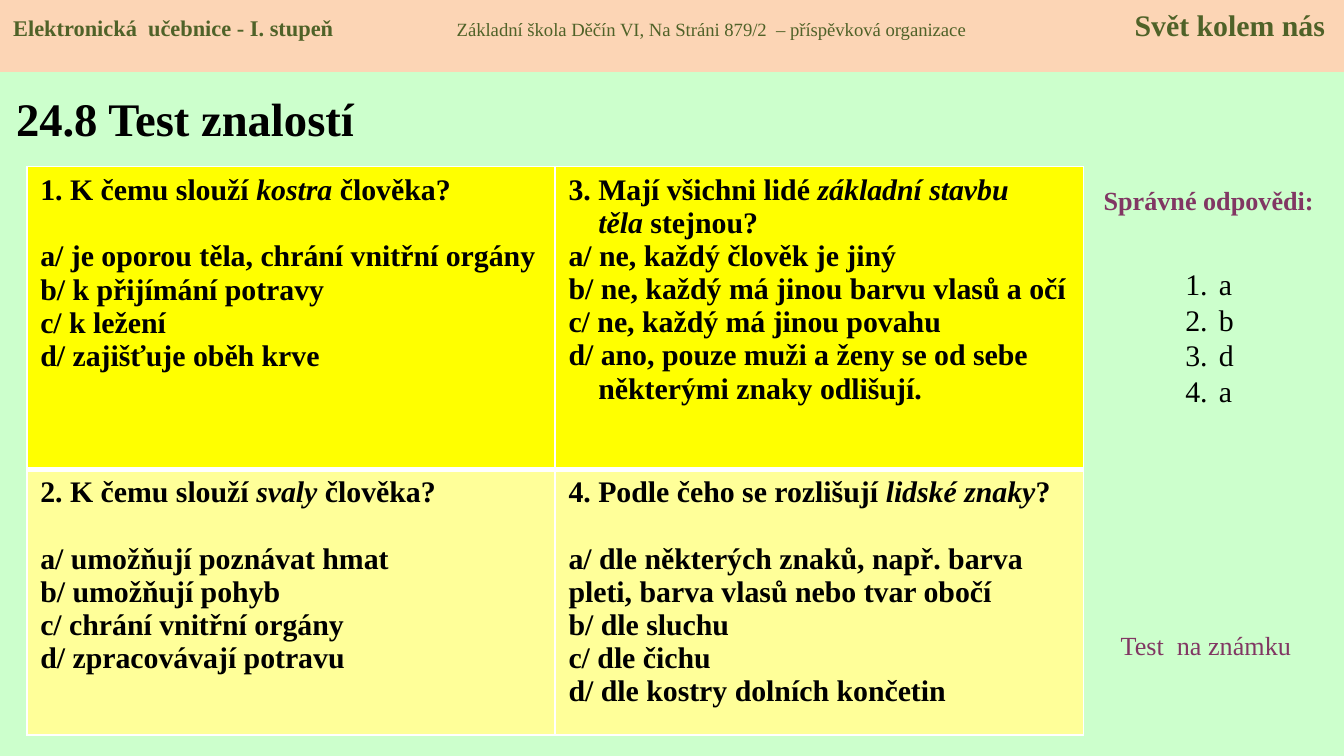
from dataclasses import dataclass

from lxml.etree import SubElement
from pptx import Presentation
from pptx.dml.color import RGBColor
from pptx.enum.shapes import MSO_SHAPE
from pptx.enum.text import MSO_ANCHOR, MSO_AUTO_SIZE, PP_ALIGN
from pptx.oxml.ns import qn
from pptx.util import Pt

COLORS = {
    "page": "CCFFCC", "band": "FCD5B5", "green": "4F6228",
    "purple": "813763", "black": "000000", "white": "FFFFFF",
    "yellow": "FFFF00", "pale": "FFFF99",
}
FONT = "Times New Roman"
GAP = 18
HANG = 16


@dataclass
class Question:
    row: int
    col: int
    lines: list[str]
    gap: bool = True
    hanging: tuple[int, ...] = ()


@dataclass
class Label:
    text: str
    box: tuple[float, float, float, float]
    bold: bool
    align: PP_ALIGN


QUESTIONS = [
    Question(0, 0, ["1. K čemu slouží *kostra* člověka?",
                    "a/ je oporou těla, chrání vnitřní orgány",
                    "b/ k přijímání potravy", "c/ k ležení",
                    "d/ zajišťuje oběh krve"]),
    Question(0, 1, ["3. Mají všichni lidé *základní stavbu*", "*těla* stejnou?",
                    "a/ ne, každý člověk je jiný",
                    "b/ ne, každý má jinou barvu vlasů a očí",
                    "c/ ne, každý má jinou povahu",
                    "d/ ano, pouze muži a ženy se od sebe",
                    "některými znaky odlišují."], gap=False, hanging=(1, 6)),
    Question(1, 0, ["2. K čemu slouží *svaly* člověka?",
                    "a/ umožňují poznávat hmat", "b/ umožňují pohyb",
                    "c/ chrání vnitřní orgány", "d/ zpracovávají potravu"]),
    Question(1, 1, ["4. Podle čeho se rozlišují *lidské znaky*?",
                    "a/ dle některých znaků, např. barva pleti, "
                    "barva vlasů nebo tvar obočí",
                    "b/ dle sluchu", "c/ dle čichu",
                    "d/ dle kostry dolních končetin"]),
]
LABELS = [
    Label("Správné odpovědi:", (579.6, 95, 136, 24.5), True, PP_ALIGN.CENTER),
    Label("Test  na známku", (593.3, 333.4, 113, 24.5), False, PP_ALIGN.LEFT),
]
HEADER = [
    ("Elektronická  učebnice - I. stupeň\t", 12, True),
    ("Základní škola Děčín VI, Na Stráni 879/2  – příspěvková organizace\t", 10, False),
    ("Svět kolem nás", 16, True),
]


def rgb(name: str) -> RGBColor:
    return RGBColor.from_string(COLORS[name])


def set_attrs(obj, values: dict) -> None:
    for name, value in values.items():
        setattr(obj, name, value)


def add_run(p, text: str, size: float, color: str = "black",
            bold: bool = False, italic: bool = False) -> None:
    r = p.add_run()
    r.text = text
    set_attrs(r.font, {"name": FONT, "size": Pt(size), "bold": bold, "italic": italic})
    r.font.color.rgb = rgb(color)


def place(sp, left: float, top: float, width: float, height: float) -> None:
    set_attrs(sp, {"left": Pt(left), "top": Pt(top),
                   "width": Pt(width), "height": Pt(height)})


def add_title(sp, text: str) -> None:
    place(sp, 1.4, 39.6, 229.7, 46.8)
    set_attrs(sp.text_frame, {"auto_size": MSO_AUTO_SIZE.NONE, "word_wrap": True,
                              "vertical_anchor": MSO_ANCHOR.MIDDLE})
    p = sp.text_frame.paragraphs[0]
    p.alignment = PP_ALIGN.LEFT
    add_run(p, text, 25, bold=True)


def add_answers(sp, answers: str) -> None:
    place(sp, 627.8, 139, 39.6, 123)
    tf = sp.text_frame
    set_attrs(tf, {"auto_size": MSO_AUTO_SIZE.NONE, "word_wrap": True})
    for i, answer in enumerate(answers):
        p = tf.add_paragraph() if i else tf.paragraphs[0]
        set_attrs(p, {"space_before": Pt(0), "line_spacing": Pt(19)})
        pPr = p._p.get_or_add_pPr()
        pPr.set("marL", str(Pt(18)))
        pPr.set("indent", str(-Pt(18)))
        SubElement(pPr, qn("a:buFont"), typeface="+mj-lt")
        SubElement(pPr, qn("a:buAutoNum"), type="arabicPeriod")
        add_run(p, answer, 16)


def add_label(slide, label: Label) -> None:
    tf = slide.shapes.add_textbox(*map(Pt, label.box)).text_frame
    tf.word_wrap = True
    p = tf.paragraphs[0]
    p.alignment = label.align
    add_run(p, label.text, 14, "purple", label.bold)


def add_border(cell, side: str, width: float) -> None:
    ln = SubElement(cell._tc.get_or_add_tcPr(), qn(f"a:ln{side}"), w=str(Pt(width)))
    fill = SubElement(ln, qn("a:solidFill"))
    SubElement(fill, qn("a:srgbClr"), val=COLORS["white"])


def fill_cell(cell, question: Question) -> None:
    middle = {(0, "B"), (1, "T")}
    for side in "LRTB":
        add_border(cell, side, 3 if (question.row, side) in middle else 1)
    cell.fill.solid()
    cell.fill.fore_color.rgb = rgb("pale" if question.row else "yellow")
    tf = cell.text_frame
    for i, line in enumerate(question.lines):
        p = tf.add_paragraph() if i else tf.paragraphs[0]
        if i == 0 and question.gap:
            p.space_after = Pt(GAP)
        if i in question.hanging:
            p._p.get_or_add_pPr().set("marL", str(Pt(HANG)))
        for n, part in enumerate(line.split("*")):
            if part:
                add_run(p, part, 16, bold=True, italic=n % 2 == 1)


def add_questions(slide) -> None:
    table = slide.shapes.add_table(2, 2, Pt(14.4), Pt(89.3), Pt(566), Pt(304.6)).table
    for row, height in zip(table.rows, (162, 142.6)):
        row.height = Pt(height)
    for question in QUESTIONS:
        fill_cell(table.cell(question.row, question.col), question)


def add_header(slide) -> None:
    sp = slide.shapes.add_shape(MSO_SHAPE.RECTANGLE, 0, 0, Pt(720), Pt(38.6))
    sp.shadow.inherit = False
    sp.fill.solid()
    sp.fill.fore_color.rgb = rgb("band")
    sp.line.fill.background()
    set_attrs(sp.text_frame, {"word_wrap": True, "vertical_anchor": MSO_ANCHOR.TOP})
    p = sp.text_frame.paragraphs[0]
    p.alignment = PP_ALIGN.LEFT
    tabs = SubElement(p._p.get_or_add_pPr(), qn("a:tabLst"))
    for stop in (237.6, 600.8):
        SubElement(tabs, qn("a:tab"), pos=str(Pt(stop)), algn="l")
    for text, size, bold in HEADER:
        add_run(p, text, size, "green", bold)


def main() -> None:
    prs = Presentation()
    set_attrs(prs, {"slide_width": Pt(720), "slide_height": Pt(405)})
    s = prs.slides.add_slide(prs.slide_layouts[1])
    s.background.fill.solid()
    s.background.fill.fore_color.rgb = rgb("page")
    add_title(s.shapes.title, "24.8 Test znalostí")
    add_questions(s)
    add_answers(s.placeholders[1], "abda")
    for label in LABELS:
        add_label(s, label)
    add_header(s)
    prs.save("out.pptx")


if __name__ == "__main__":
    main()
